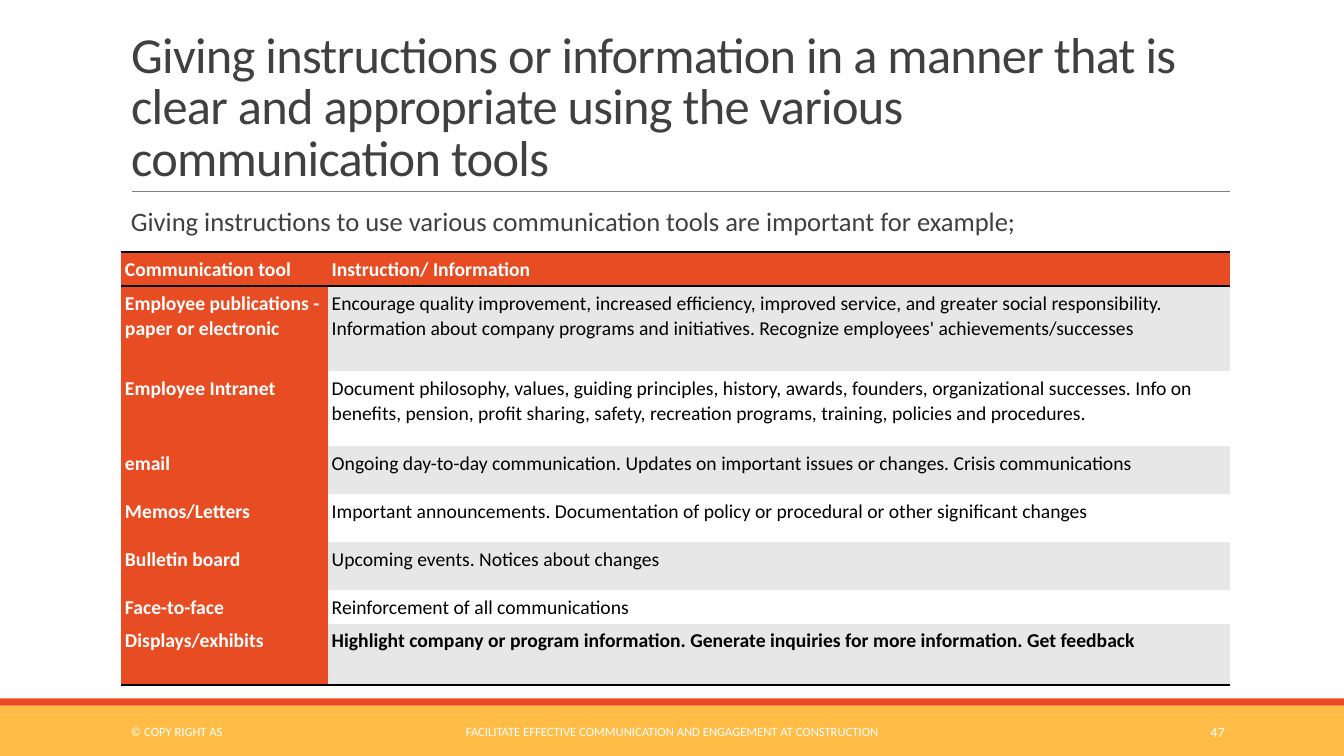
from dataclasses import dataclass

from lxml.etree import SubElement
from pptx import Presentation
from pptx.dml.color import RGBColor
from pptx.enum.shapes import MSO_CONNECTOR, MSO_SHAPE
from pptx.enum.text import MSO_ANCHOR, MSO_AUTO_SIZE, PP_ALIGN
from pptx.oxml.ns import qn
from pptx.util import Cm, Pt


@dataclass(frozen=True)
class Theme:
    """Colours, font and type sizes of the slide."""
    font: str = "Calibri"
    accent: str = "E84C22"
    gold: str = "FFBD47"
    ink: str = "404040"
    rule: str = "808080"
    black: str = "000000"
    white: str = "FFFFFF"
    band: str = "E7E7E7"
    head: int = 36
    lead: int = 19
    cell: int = 14
    foot: int = 9
    page: int = 10


TITLE = ("Giving instructions or information in a manner that is clear and "
         "appropriate using the various communication tools")
LEAD = "Giving instructions to use various communication tools are important for example;"
TOOLS = [
    ("Communication tool", "Instruction/ Information", 0.86),
    ("Employee publications - paper or electronic",
     "Encourage quality improvement, increased efficiency, improved service, and greater "
     "social responsibility. Information about company programs and initiatives. "
     "Recognize employees' achievements/successes", 2.14),
    ("Employee Intranet",
     "Document philosophy, values, guiding principles, history, awards, founders, "
     "organizational successes. Info on benefits, pension, profit sharing, safety, "
     "recreation programs, training, policies and procedures.", 1.9),
    ("email", "Ongoing day-to-day communication. Updates on important issues or changes. "
     "Crisis communications", 1.2),
    ("Memos/Letters", "Important announcements. Documentation of policy or procedural "
     "or other significant changes", 1.21),
    ("Bulletin board", "Upcoming events. Notices about changes", 1.21),
    ("Face-to-face", "Reinforcement of all communications", 0.84),
    ("Displays/exhibits", "Highlight company or program information. Generate inquiries "
     "for more information. Get feedback", 1.54),
]
FEET = [
    ("© COPY RIGHT AS", 3.05, 6.86, "foot", PP_ALIGN.LEFT),
    ("FACILITATE EFFECTIVE COMMUNICATION AND ENGAGEMENT AT CONSTRUCTION",
     10.24, 13.39, "foot", PP_ALIGN.CENTER),
    ("47", 27.48, 3.63, "page", PP_ALIGN.RIGHT),
]


def put(item, **vals):
    """Set each named value on an item."""
    for name, val in vals.items():
        setattr(item, name, val)


def box(*sides):
    """Turn left, top, width and height into lengths."""
    return [Cm(side) for side in sides]


class Deck:
    """Holds the theme and the current slide and draws its elements."""

    def __init__(self, theme):
        """Open a wide file with one title and content slide."""
        self.theme = theme
        self.file = Presentation()
        put(self.file, slide_width=Cm(33.87), slide_height=Cm(19.05))
        self.slide = self.file.slides.add_slide(self.file.slide_layouts[1])
        self.shapes = self.slide.shapes

    def text(self, frame, words, size, color, bold=False, **para):
        """Fill a frame with one styled paragraph and return it."""
        frame.word_wrap = True
        line = frame.paragraphs[0]
        put(line, **para)
        run = line.add_run()
        run.text = words
        put(run.font, name=self.theme.font, size=Pt(size), bold=bold)
        run.font.color.rgb = RGBColor.from_string(color)
        return line

    def hold(self, index, place, **frame):
        """Move a placeholder and return its text frame."""
        item = self.slide.placeholders[index]
        put(item, **dict(zip(("left", "top", "width", "height"), box(*place))))
        put(item.text_frame, auto_size=MSO_AUTO_SIZE.NONE, **frame)
        return item.text_frame

    def title(self, words, *place):
        """Set the title."""
        frame = self.hold(0, place, vertical_anchor=MSO_ANCHOR.BOTTOM)
        line = self.text(frame, words, self.theme.head, self.theme.ink,
                         alignment=PP_ALIGN.LEFT, line_spacing=0.85)
        line.runs[0].font._element.set("spc", "-50")

    def lead(self, words, *place):
        """Set the lead line with its blank bullet."""
        frame = self.hold(1, place, margin_left=0, margin_right=0,
                          vertical_anchor=MSO_ANCHOR.TOP)
        line = self.text(frame, words, self.theme.lead, self.theme.ink, line_spacing=0.9,
                         space_before=Pt(12), space_after=Pt(2))
        props = line._p.get_or_add_pPr()
        props.set("marL", str(Cm(0.25)))
        props.set("indent", str(-Cm(0.25)))
        tint = SubElement(props, qn("a:buClr"))
        SubElement(tint, qn("a:srgbClr"), val=self.theme.accent)
        SubElement(props, qn("a:buChar"), char=" ")

    def bar(self, color, *place):
        """Draw a plain filled bar."""
        item = self.shapes.add_shape(MSO_SHAPE.RECTANGLE, *box(*place))
        item.shadow.inherit = False
        item.fill.solid()
        item.fill.fore_color.rgb = RGBColor.from_string(color)
        item.line.fill.background()

    def rule(self, *ends):
        """Draw a thin line."""
        item = self.shapes.add_connector(MSO_CONNECTOR.STRAIGHT, *box(*ends))
        item.line.width = Pt(0.5)
        item.line.color.rgb = RGBColor.from_string(self.theme.rule)
        SubElement(item._element.spPr, qn("a:effectLst"))

    def label(self, words, left, width, size, align):
        """Draw a footer label."""
        item = self.shapes.add_textbox(*box(left, 17.93, width, 1.02))
        item.text_frame.vertical_anchor = MSO_ANCHOR.MIDDLE
        self.text(item.text_frame, words, getattr(self.theme, size),
                  self.theme.white, alignment=align)

    def edge(self, cell, tag):
        """Draw a thick border on one side of a cell."""
        line = SubElement(cell._tc.get_or_add_tcPr(), qn(tag), w=str(Pt(2)))
        fill = SubElement(line, qn("a:solidFill"))
        SubElement(fill, qn("a:srgbClr"), val=self.theme.black)

    def table(self, rows, left, top, widths):
        """Draw the table with a filled head row and first column."""
        theme, last = self.theme, len(rows) - 1
        high = sum(row[-1] for row in rows)
        grid = self.shapes.add_table(len(rows), len(widths),
                                     *box(left, top, sum(widths), high)).table
        put(grid, first_row=False, horz_banding=False)
        style = grid._tbl.tblPr.find(qn("a:tableStyleId"))
        style.text = "{2D5ABB26-0587-4C30-8999-92F81FD0307C}"
        for col, width in zip(grid.columns, widths):
            col.width = Cm(width)
        for r, (*texts, height) in enumerate(rows):
            grid.rows[r].height = Cm(height)
            for c, words in enumerate(texts):
                cell = grid.cell(r, c)
                key = r == 0 or c == 0
                sides = ("left", "right", "top", "bottom")
                put(cell, **{f"margin_{side}": Cm(0.1) for side in sides})
                cell.vertical_anchor = MSO_ANCHOR.TOP if r else MSO_ANCHOR.MIDDLE
                if r == 0:
                    self.edge(cell, "a:lnT")
                if r in (0, last):
                    self.edge(cell, "a:lnB")
                cell.fill.solid()
                fill = theme.accent if key else theme.band if r % 2 else theme.white
                cell.fill.fore_color.rgb = RGBColor.from_string(fill)
                self.text(cell.text_frame, words, theme.cell,
                          theme.white if key else theme.black, key or r == last,
                          line_spacing=1.07, space_after=Pt(8))


def main():
    """Build and save the slide."""
    theme = Theme()
    deck = Deck(theme)
    deck.bar(theme.gold, 0, 17.78, 33.87, 1.27)
    deck.bar(theme.accent, 0, 17.6, 33.87, 0.18)
    deck.rule(3.33, 4.83, 30.99, 4.83)
    deck.title(TITLE, 3.05, 0.79, 27.94, 4.04)
    deck.lead(LEAD, 3.05, 5.13, 27.94, 11.18)
    deck.table(TOOLS, 3.05, 6.35, (5.21, 22.73))
    for foot in FEET:
        deck.label(*foot)
    deck.file.save("out.pptx")


if __name__ == "__main__":
    main()
